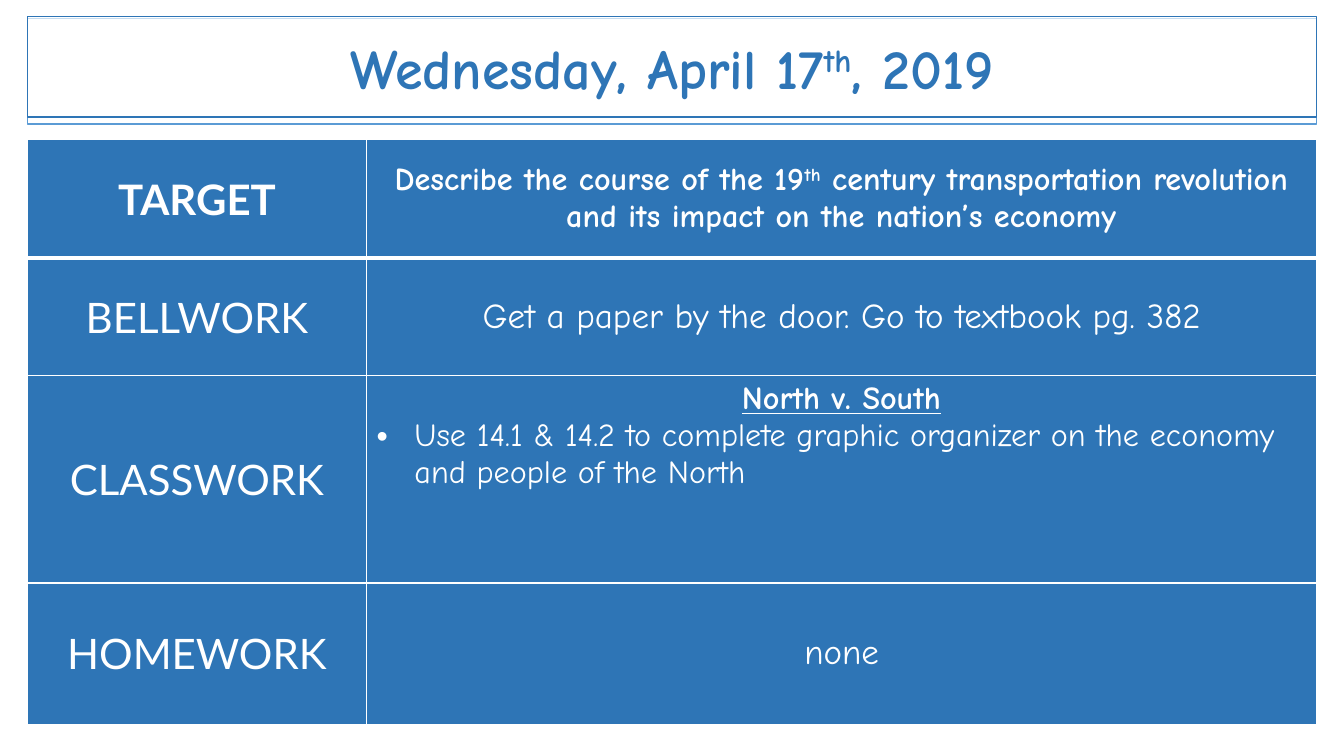
from collections import namedtuple
from dataclasses import dataclass

from lxml import etree
from pptx import Presentation
from pptx import util as u
from pptx.dml.color import RGBColor
from pptx.enum import shapes, text
from pptx.oxml import ns

Box = namedtuple("Box", "left top width height")


@dataclass(frozen=True)
class Theme:
    """Colours, fonts and type sizes of the agenda."""
    white: str = "FFFFFF"
    blue: str = "2E75B6"
    light_blue: str = "5B9BD5"
    label_font: str = "Lato"
    body_font: str = "Comic Neue"
    title_size: int = 40
    label_size: int = 30
    note_size: int = 25
    detail_size: int = 23


THEME = Theme()
AGENDA = [
    ("TARGET", 3.0, THEME.detail_size, [
        "Describe the course of the 19", "th",
        " century transportation revolution and its impact on the nation’s economy"]),
    ("BELLWORK", 2.95, THEME.note_size, ["Get a paper by the door. Go to textbook pg. 382"]),
    ("CLASSWORK", 5.23, THEME.detail_size, ["North v. South"]),
    ("HOMEWORK", 3.56, THEME.note_size, ["none"]),
]
CLASSWORK_TASK = "Use 14.1 & 14.2 to complete graphic organizer on the economy and people of the North"


def add_child(parent, tag, **attributes):
    """Append a DrawingML element to parent."""
    return etree.SubElement(parent, ns.qn(tag), attributes)


def fill_solid(fill, color, opacity=100):
    """Fill with one colour at the given opacity percentage."""
    fill.solid()
    fill.fore_color.rgb = RGBColor.from_string(color)
    if opacity < 100:
        color_node = fill._xPr.find(".//" + ns.qn("a:srgbClr"))
        add_child(color_node, "a:alpha", val=str(opacity * 1000))


def outline(shape, color):
    """Give a shape a one-point outline."""
    shape.line.color.rgb = RGBColor.from_string(color)
    shape.line.width = u.Pt(1)


def write(para, pieces, font, size, color, bold=False, align=text.PP_ALIGN.CENTER):
    """Write pieces into a paragraph, raising the ordinal suffix."""
    para.alignment = align
    para.font.name = font
    para.font.size = u.Pt(size)
    para.font.bold = bold
    para.font.color.rgb = RGBColor.from_string(color)
    for piece in pieces:
        span = para.add_run()
        span.text = piece
        if piece == "th":
            span._r.get_or_add_rPr().set("baseline", "30000")


def add_date_banner(page, box):
    """Place the date title over a slightly lower backing frame."""
    backing = page.shapes.add_shape(
        shapes.MSO_SHAPE.RECTANGLE, box.left, box.top + u.Cm(0.05),
        box.width, box.height + u.Cm(0.13))
    backing.shadow.inherit = False
    fill_solid(backing.fill, THEME.white)
    outline(backing, THEME.light_blue)

    title = page.shapes.title
    page.shapes._spTree.append(title._element)
    title.left, title.top, title.width, title.height = box
    fill_solid(title.fill, THEME.white, 65)
    outline(title, THEME.blue)
    frame = title.text_frame
    frame.auto_size = text.MSO_AUTO_SIZE.NONE
    frame.word_wrap = True
    frame.vertical_anchor = text.MSO_ANCHOR.MIDDLE
    write(frame.paragraphs[0], ["Wednesday, April 17", "th", ", 2019"],
          THEME.body_font, THEME.title_size, THEME.blue, bold=True)


def style_cell(cell, row):
    """Fill and border a cell, with a thick rule under the first row."""
    thick = {0: "a:lnB", 1: "a:lnT"}.get(row)
    properties = cell._tc.get_or_add_tcPr()
    for tag in ("a:lnL", "a:lnR", "a:lnT", "a:lnB"):
        border = add_child(properties, tag, w=str(u.Pt(3 if tag == thick else 1)))
        add_child(add_child(border, "a:solidFill"), "a:srgbClr", val=THEME.white)
    fill_solid(cell.fill, THEME.blue, 80)
    cell.vertical_anchor = text.MSO_ANCHOR.MIDDLE


def add_classwork_task(cell):
    """Turn the cell's line into a heading and add a bulleted task."""
    cell.vertical_anchor = text.MSO_ANCHOR.TOP
    heading = cell.text_frame.paragraphs[0]
    heading.font.bold = True
    heading.font.underline = True
    task = cell.text_frame.add_paragraph()
    properties = task._p.get_or_add_pPr()
    indent = u.Cm(0.95)
    properties.set("marL", str(indent))
    properties.set("indent", str(-indent))
    add_child(properties, "a:buFont", typeface="Arial")
    add_child(properties, "a:buChar", char="•")
    write(task, [CLASSWORK_TASK], THEME.body_font, THEME.detail_size,
          THEME.white, align=text.PP_ALIGN.LEFT)


def add_agenda(page, box):
    """Place the agenda table with one labelled row per activity."""
    table = page.shapes.add_table(len(AGENDA), 2, *box).table
    table.first_row = table.horz_banding = False
    label_width = u.Cm(8.55)
    table.columns[0].width = label_width
    table.columns[1].width = box.width - label_width
    for row, (label, height, size, pieces) in enumerate(AGENDA):
        table.rows[row].height = u.Cm(height)
        contents = [([label], THEME.label_font, THEME.label_size),
                    (pieces, THEME.body_font, size)]
        for column, (words, font, points) in enumerate(contents):
            cell = table.cell(row, column)
            style_cell(cell, row)
            write(cell.text_frame.paragraphs[0], words, font, points,
                  THEME.white, bold=row == 0)
        if label == "CLASSWORK":
            add_classwork_task(cell)


def main():
    """Build the daily agenda slide."""
    deck = Presentation()
    deck.slide_width, deck.slide_height = u.Cm(33.87), u.Cm(19.05)
    page = deck.slides.add_slide(deck.slide_layouts.get_by_name("Title Only"))
    left, width = u.Cm(0.69), u.Cm(32.49)
    add_agenda(page, Box(left, u.Cm(3.51), width, u.Cm(14.74)))
    add_date_banner(page, Box(left, u.Cm(0.41), width, u.Cm(2.54)))
    deck.save("out.pptx")


if __name__ == "__main__":
    main()
